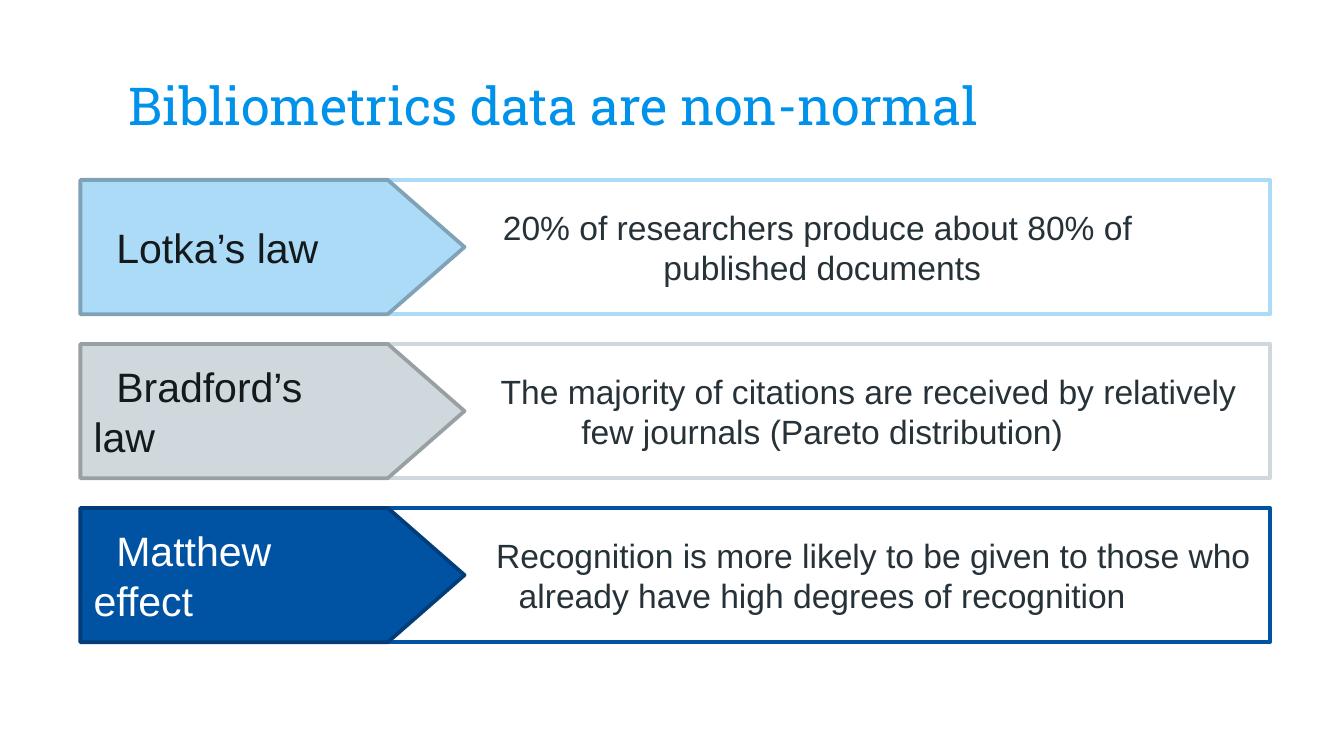
from pptx import Presentation
from pptx.dml.color import RGBColor
from pptx.enum.shapes import MSO_SHAPE
from pptx.enum.text import MSO_ANCHOR, MSO_AUTO_SIZE, PP_ALIGN
from pptx.util import Cm, Pt

TITLE_BLUE = RGBColor(0x00, 0x91, 0xEA)
LIGHT_BLUE = RGBColor(0xAC, 0xDB, 0xF8)
LIGHT_BLUE_EDGE = RGBColor(0x7F, 0xA2, 0xB7)
GREY = RGBColor(0xCF, 0xD8, 0xDC)
GREY_EDGE = RGBColor(0x99, 0xA0, 0xA3)
DARK_BLUE = RGBColor(0x00, 0x53, 0xA3)
DARK_BLUE_EDGE = RGBColor(0x00, 0x3D, 0x79)
BODY_TEXT = RGBColor(0x26, 0x32, 0x38)
LABEL_TEXT = RGBColor(0x14, 0x19, 0x1B)
WHITE = RGBColor(0xFF, 0xFF, 0xFF)

ROW_TOP, ROW_PITCH, ROW_HEIGHT = 3.4, 3.1, 2.54
ARROW_LEFT, ARROW_LENGTH = 1.52, 7.26
BOX_LEFT, BOX_WIDTH = 7.08, 16.92

# Label, fill, edge, label colour, description lines, first-line indent in cm
LAWS = [
    ("Lotka’s law", LIGHT_BLUE, LIGHT_BLUE_EDGE, LABEL_TEXT,
     ["20% of researchers produce about 80% of ", "published documents"], 0),
    ("Bradford’s law", GREY, GREY_EDGE, LABEL_TEXT,
     ["The majority of citations are received by relatively few journals "
      "(Pareto distribution)"], 1.75),
    ("Matthew effect", DARK_BLUE, DARK_BLUE_EDGE, WHITE,
     ["Recognition is more likely to be given to those who already have "
      "high degrees of recognition"], 1.93),
]


def add_run(paragraph, text, size, color, font="Arial"):
    run = paragraph.add_run()
    run.text = text
    run.font.name = font
    run.font.size = Pt(size)
    run.font.color.rgb = color


def style_shape(shape, fill, edge):
    shape.shadow.inherit = False
    shape.fill.solid()
    shape.fill.fore_color.rgb = fill
    shape.line.color.rgb = edge
    shape.line.width = Pt(2)


def prepare_paragraph(shape, alignment, indent):
    """Set up the text frame and return its first paragraph."""
    frame = shape.text_frame
    frame.word_wrap = True
    frame.vertical_anchor = MSO_ANCHOR.MIDDLE
    frame.margin_left = frame.margin_right = Cm(0.25)
    frame.margin_top = frame.margin_bottom = Cm(0.25)
    paragraph = frame.paragraphs[0]
    paragraph.alignment = alignment
    properties = paragraph._p.get_or_add_pPr()
    properties.set("marL", "0")
    properties.set("indent", str(Cm(indent)))
    return paragraph


def add_description(group, top, lines, edge, indent):
    box = group.shapes.add_shape(MSO_SHAPE.RECTANGLE, Cm(BOX_LEFT), Cm(top),
                                 Cm(BOX_WIDTH), Cm(ROW_HEIGHT))
    style_shape(box, WHITE, edge)
    paragraph = prepare_paragraph(box, PP_ALIGN.CENTER, indent)
    for index, line in enumerate(lines):
        if index:
            paragraph.add_line_break()
        add_run(paragraph, line, 18, BODY_TEXT)


def add_arrow_label(group, top, label, fill, edge, color):
    # The connector points down, so it is turned about its centre to point right
    shift = (ARROW_LENGTH - ROW_HEIGHT) / 2
    arrow = group.shapes.add_shape(
        MSO_SHAPE.FLOWCHART_OFFPAGE_CONNECTOR, Cm(ARROW_LEFT + shift),
        Cm(top - shift), Cm(ROW_HEIGHT), Cm(ARROW_LENGTH))
    arrow.rotation = 270
    style_shape(arrow, fill, edge)
    paragraph = prepare_paragraph(arrow, PP_ALIGN.LEFT, 0.43)
    arrow.text_frame._txBody.bodyPr.set("vert", "vert")
    add_run(paragraph, label, 22, color)


def add_title(slide, text):
    title = slide.shapes.title
    title.left, title.top = Cm(2.18), Cm(0.86)
    title.width, title.height = Cm(21.03), Cm(1.96)
    frame = title.text_frame
    frame.auto_size = MSO_AUTO_SIZE.NONE
    frame.vertical_anchor = MSO_ANCHOR.BOTTOM
    frame.margin_left = frame.margin_right = Cm(0.25)
    frame.margin_top = frame.margin_bottom = Cm(0.25)
    paragraph = frame.paragraphs[0]
    paragraph.alignment = PP_ALIGN.LEFT
    add_run(paragraph, text, 28, TITLE_BLUE, "Roboto Slab")


def main():
    presentation = Presentation()
    presentation.slide_width = Cm(25.4)
    presentation.slide_height = Cm(14.29)
    slide = presentation.slides.add_slide(presentation.slide_layouts[5])
    add_title(slide, "Bibliometrics data are non-normal")

    # One row per law: description box behind, arrow label in front
    group = slide.shapes.add_group_shape()
    for row, (label, fill, edge, color, lines, indent) in enumerate(LAWS):
        top = ROW_TOP + row * ROW_PITCH
        add_description(group, top, lines, fill, indent)
        add_arrow_label(group, top, label, fill, edge, color)

    presentation.save("out.pptx")


if __name__ == "__main__":
    main()
